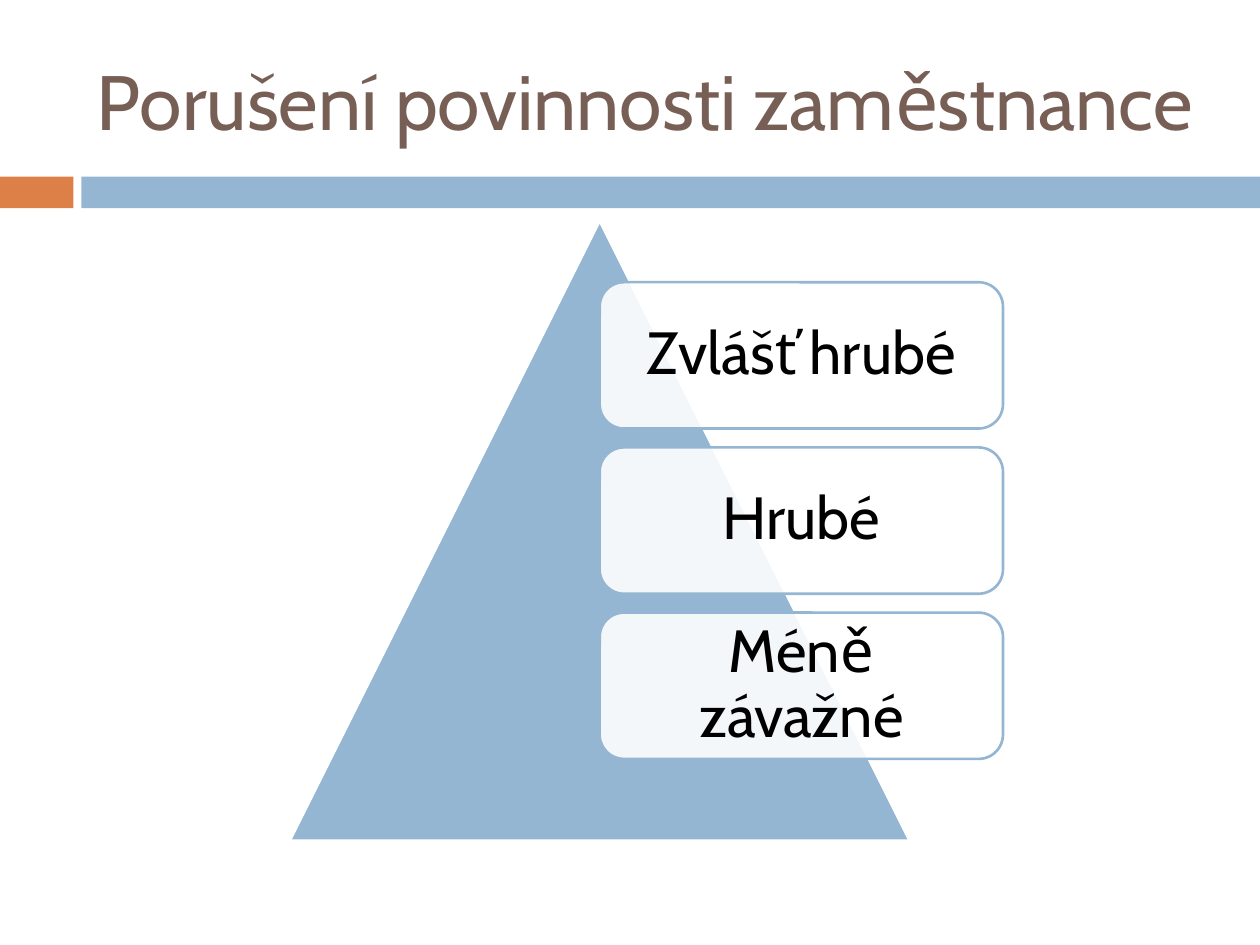
from dataclasses import dataclass

from lxml import etree
from pptx import Presentation
from pptx import util as u
from pptx.dml.color import RGBColor
from pptx.enum import shapes, text
from pptx.oxml import ns

ORANGE = RGBColor(0xDD, 0x80, 0x47)
BLUE = RGBColor(0x94, 0xB6, 0xD2)
BROWN = RGBColor(0x77, 0x5F, 0x55)
WHITE = RGBColor(0xFF, 0xFF, 0xFF)
BLACK = RGBColor(0x00, 0x00, 0x00)
FONT = "Cabin"
CARD_TOP = 5.69
CARD_PITCH = 3.33
CARD_LABELS = ("Zvlášť hrubé", "Hrubé", "Méně závažné")


@dataclass(frozen=True)
class Box:
    left: float
    top: float
    width: float
    height: float

    def lengths(self) -> tuple:
        return tuple(u.Cm(n) for n in (self.left, self.top, self.width, self.height))


def add_filled(slide, kind, box: Box, fill: RGBColor, outline: RGBColor | None = None):
    shape = slide.shapes.add_shape(kind, *box.lengths())
    shape.shadow.inherit = False
    shape.fill.solid()
    shape.fill.fore_color.rgb = fill
    if outline is None:
        shape.line.fill.background()
    else:
        shape.line.color.rgb = outline
        shape.line.width = u.Pt(1.5)
    return shape


def write(shape, words: str, size: int, color: RGBColor, align, inset: tuple) -> None:
    frame = shape.text_frame
    frame.text = words
    frame.word_wrap = True
    frame.vertical_anchor = text.MSO_ANCHOR.MIDDLE
    frame.margin_left = frame.margin_right = u.Cm(inset[0])
    frame.margin_top = frame.margin_bottom = u.Cm(inset[1])
    paragraph = frame.paragraphs[0]
    paragraph.alignment = align
    font = paragraph.runs[0].font
    font.name = FONT
    font.size = u.Pt(size)
    font.color.rgb = color


def set_opacity(shape, percent: int) -> None:
    color = shape.fill._xPr.find(ns.qn("a:solidFill"))[0]
    etree.SubElement(color, ns.qn("a:alpha"), val=str(percent * 1000))


def add_card(slide, box: Box, label: str) -> None:
    card = add_filled(slide, shapes.MSO_SHAPE.ROUNDED_RECTANGLE, box, WHITE, BLUE)
    set_opacity(card, 90)
    write(card, label, 34, BLACK, text.PP_ALIGN.CENTER, (0.36, 0.36))
    card.text_frame.paragraphs[0].line_spacing = 0.9


def main() -> None:
    presentation = Presentation()
    presentation.slide_width = u.Cm(25.4)
    presentation.slide_height = u.Cm(19.05)
    slide = presentation.slides.add_slide(presentation.slide_layouts[6])

    rectangle = shapes.MSO_SHAPE.RECTANGLE
    add_filled(slide, rectangle, Box(0, 3.56, 1.48, 0.64), ORANGE)
    add_filled(slide, rectangle, Box(1.64, 3.56, 23.76, 0.64), BLUE)

    title = slide.shapes.add_textbox(*Box(1.7, 0.64, 22.66, 2.74).lengths())
    write(title, "Porušení povinnosti zaměstnance", 44, BROWN,
          text.PP_ALIGN.LEFT, (0.25, 0.13))

    add_filled(slide, shapes.MSO_SHAPE.ISOSCELES_TRIANGLE,
               Box(5.84, 4.45, 12.5, 12.5), BLUE, WHITE)
    for index, label in enumerate(CARD_LABELS):
        add_card(slide, Box(12.09, CARD_TOP + index * CARD_PITCH, 8.13, 2.95), label)

    presentation.save("out.pptx")


if __name__ == "__main__":
    main()
